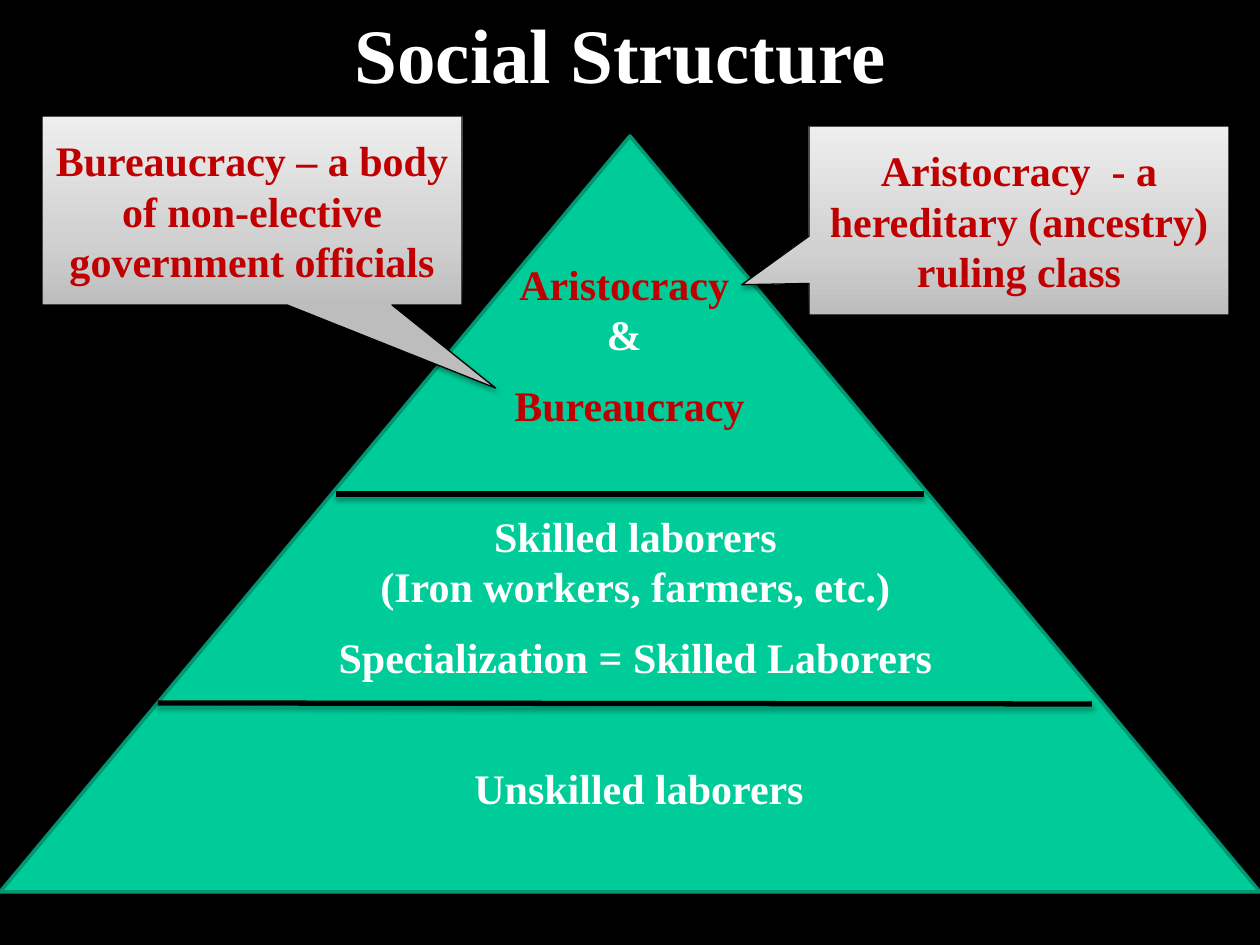
"""Build a slide showing a social pyramid with two explanatory callouts."""
import dataclasses

import lxml.etree
import pptx
import pptx.dml.color
import pptx.enum.shapes
import pptx.enum.text
import pptx.oxml
import pptx.oxml.ns
import pptx.util

SCALE = 914400 / 126
ALIGN = pptx.enum.text.PP_ALIGN
SHAPE = pptx.enum.shapes.MSO_SHAPE


@dataclasses.dataclass(frozen=True)
class Theme:
    font: str = "Times New Roman"
    background: str = "000000"
    white: str = "FFFFFF"
    red: str = "C00000"
    black: str = "000000"
    green: str = "00CC99"
    green_edge: str = "009771"
    silver: tuple = ((0, "BDBDBD"), (35, "D1D1D1"), (100, "EEEEEE"))
    title_size: int = 44
    body_size: int = 24
    paragraph_gap: int = 12


THEME = Theme()
PYRAMID = (0, 136, 1260, 756)
PYRAMID_SHADOW = (43, 4, 4, 16)
DIVIDER_SHADOW = (35, 3.1, 1.8, 90)
CALLOUT_SHADOW = (38, 3.1, 1.6, 90)

TITLE = ((189, 0, 882, 106), [[("Social Structure ", THEME.white)]])
TIERS = [
    ((294, 504, 683, 190), ALIGN.CENTER, [
        [("Skilled laborers\v(Iron workers, farmers, etc.)", THEME.white)],
        [("Specialization = Skilled Laborers", THEME.white)],
    ]),
    ((472, 252, 315, 190), ALIGN.CENTER, [
        [("Aristocracy \v", THEME.red), ("& ", THEME.white)],
        [("Bureaucracy", THEME.red)],
    ]),
    ((462, 756, 378, 63), ALIGN.LEFT, [[("Unskilled laborers", THEME.white)]]),
]
DIVIDERS = [(336, 494, 924, 494), (158, 703, 1092, 704)]
CALLOUTS = [
    ((809, 126, 420, 189), (-0.66, 0.34),
     "Aristocracy  - a hereditary (ancestry) ruling class"),
    ((42, 116, 420, 189), (0.58, 0.94),
     "Bureaucracy – a body of non-elective government officials"),
]


def px(*values):
    return [pptx.util.Emu(round(value * SCALE)) for value in values]


def rgb(value):
    return pptx.dml.color.RGBColor.from_string(value)


def set_all(target, values):
    for name, value in values.items():
        setattr(target, name, value)


def write(frame, paragraphs, size, align):
    frame.word_wrap = True
    for index, spans in enumerate(paragraphs):
        para = frame.add_paragraph() if index else frame.paragraphs[0]
        para.alignment = align
        if index:
            para.space_before = pptx.util.Pt(THEME.paragraph_gap)
        for text, color in spans:
            for part, piece in enumerate(text.split("\v")):
                if part:
                    para.add_line_break()
                if piece:
                    span = para.add_run()
                    span.text = piece
                    set_all(span.font, {"name": THEME.font, "bold": True,
                                        "size": pptx.util.Pt(size)})
                    span.font.color.rgb = rgb(color)


def add_text(page, place, paragraphs, size, align=ALIGN.CENTER):
    box = page.shapes.add_textbox(*px(*place))
    write(box.text_frame, paragraphs, size, align)


def set_line(shape, color, width):
    shape.line.color.rgb = rgb(color)
    shape.line.width = pptx.util.Pt(width)


def set_shadow(shape, alpha, blur, distance, angle):
    effects = pptx.oxml.parse_xml(
        f'<a:effectLst {pptx.oxml.ns.nsdecls("a")}>'
        f'<a:outerShdw blurRad="{pptx.util.Pt(blur)}" dist="{pptx.util.Pt(distance)}" '
        f'dir="{angle * 60000}" rotWithShape="0">'
        f'<a:srgbClr val="{THEME.black}"><a:alpha val="{alpha * 1000}"/></a:srgbClr>'
        '</a:outerShdw></a:effectLst>')
    shape._element.spPr.append(effects)


def set_gradient(shape, stops):
    shape.fill.gradient()
    shape.fill.gradient_angle = 90
    stop_list = shape._element.spPr.find(".//" + pptx.oxml.ns.qn("a:gsLst"))
    for stop in list(stop_list):
        stop_list.remove(stop)
    for position, color in stops:
        stop = lxml.etree.SubElement(stop_list, pptx.oxml.ns.qn("a:gs"),
                                     pos=str(position * 1000))
        lxml.etree.SubElement(stop, pptx.oxml.ns.qn("a:srgbClr"), val=color)


def add_pyramid(page):
    pyramid = page.shapes.add_shape(SHAPE.ISOSCELES_TRIANGLE, *px(*PYRAMID))
    pyramid.fill.solid()
    pyramid.fill.fore_color.rgb = rgb(THEME.green)
    set_line(pyramid, THEME.green_edge, 2)
    set_shadow(pyramid, *PYRAMID_SHADOW)


def add_divider(page, ends):
    divider = page.shapes.add_connector(
        pptx.enum.shapes.MSO_CONNECTOR.STRAIGHT, *px(*ends))
    set_line(divider, THEME.black, 3)
    set_shadow(divider, *DIVIDER_SHADOW)


def add_callout(page, place, tip, text):
    callout = page.shapes.add_shape(SHAPE.RECTANGULAR_CALLOUT, *px(*place))
    for index, offset in enumerate(tip):
        callout.adjustments[index] = offset
    set_gradient(callout, THEME.silver)
    set_line(callout, THEME.black, 0.75)
    set_shadow(callout, *CALLOUT_SHADOW)
    callout.text_frame.vertical_anchor = pptx.enum.text.MSO_ANCHOR.MIDDLE
    write(callout.text_frame, [[(text, THEME.red)]], THEME.body_size, ALIGN.CENTER)


def main():
    deck = pptx.Presentation()
    deck.slide_width, deck.slide_height = px(1260, 945)
    page = deck.slides.add_slide(deck.slide_layouts[6])
    page.background.fill.solid()
    page.background.fill.fore_color.rgb = rgb(THEME.background)

    add_text(page, *TITLE, THEME.title_size)
    add_pyramid(page)
    for place, align, paragraphs in TIERS:
        add_text(page, place, paragraphs, THEME.body_size, align)
    for ends in DIVIDERS:
        add_divider(page, ends)
    for callout in CALLOUTS:
        add_callout(page, *callout)
    deck.save("out.pptx")


if __name__ == "__main__":
    main()
